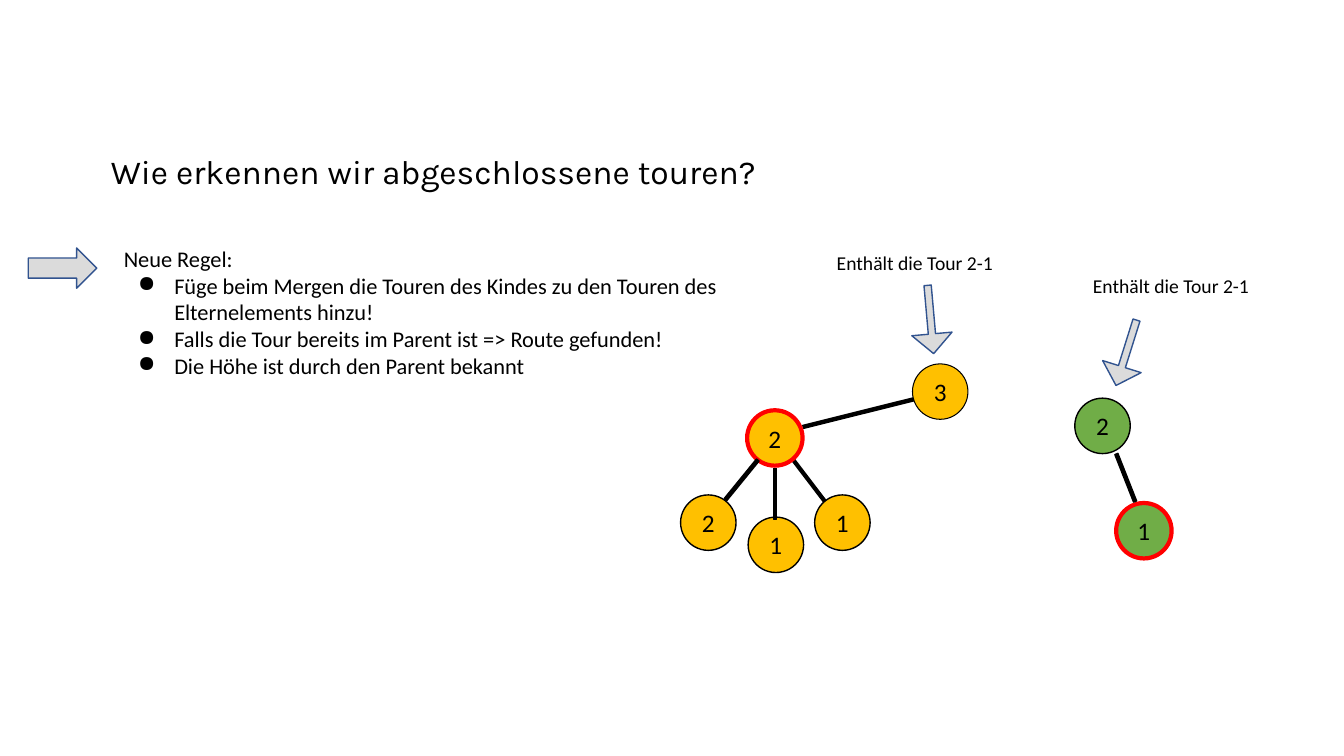
from dataclasses import dataclass

from lxml.etree import SubElement
from pptx import Presentation
from pptx.dml.color import RGBColor
from pptx.enum.shapes import MSO_SHAPE
from pptx.enum.text import MSO_ANCHOR, PP_ALIGN
from pptx.oxml.ns import qn
from pptx.util import Inches, Pt


@dataclass(frozen=True)
class Theme:
    """Colours, fonts and type sizes of the slide."""
    black: str = "000000"
    red: str = "FF0000"
    amber: str = "FFC000"
    green: str = "70AD47"
    grey: str = "DBDBDB"
    blue: str = "31538F"
    heading: str = "Karla"
    body: str = "Calibri"
    title_size: int = 24
    node_size: int = 18
    text_size: int = 16
    label_size: int = 14


class TreeSlide:
    """Draws the elements of a tree diagram on one slide."""

    def __init__(self, s, theme):
        """Keep the slide and its theme."""
        self.s, self.theme = s, theme

    def run(self, p, text, size, font):
        """Add one formatted run to a paragraph."""
        r = p.add_run()
        r.text = text
        for name, value in {"name": font, "size": Pt(size)}.items():
            setattr(r.font, name, value)
        r.font.color.rgb = RGBColor.from_string(self.theme.black)

    def frame(self, tf, inset=0.05, **format_values):
        """Set margins, wrapping and further text frame values."""
        values = {
            "word_wrap": True,
            "margin_left": Inches(0.1), "margin_right": Inches(0.1),
            "margin_top": Inches(inset), "margin_bottom": Inches(inset),
            **format_values,
        }
        for name, value in values.items():
            setattr(tf, name, value)

    def bullet(self, p):
        """Give a paragraph a hanging round bullet."""
        pPr = p._p.get_or_add_pPr()
        pPr.set("marL", str(Inches(0.5)))
        pPr.set("indent", str(Inches(-0.36)))
        colour = SubElement(pPr, qn("a:buClr"))
        SubElement(colour, qn("a:srgbClr")).set("val", self.theme.black)
        SubElement(pPr, qn("a:buChar")).set("char", "●")

    def text(self, box, lines, size, font=None, inset=0.05):
        """Add a text box whose lines after the first are bullets."""
        tf = self.s.shapes.add_textbox(*map(Inches, box)).text_frame
        self.frame(tf, inset)
        for i, line in enumerate(lines):
            p = tf.add_paragraph() if i else tf.paragraphs[0]
            if i:
                self.bullet(p)
            self.run(p, line, size, font or self.theme.body)

    def shape(self, kind, box, fill, line, width=1, rotation=0, adjustments=()):
        """Add a filled and outlined preset shape."""
        sp = self.s.shapes.add_shape(kind, *map(Inches, box))
        sp.shadow.inherit = False
        sp.rotation = rotation
        for i, value in enumerate(adjustments):
            sp.adjustments[i] = value
        sp.fill.solid()
        sp.fill.fore_color.rgb = RGBColor.from_string(fill)
        sp.line.color.rgb = RGBColor.from_string(line)
        sp.line.width = Pt(width)
        return sp

    def node(self, left, top, value, fill, line, width=1):
        """Add a numbered tree node."""
        sp = self.shape(MSO_SHAPE.OVAL, (left, top, 0.55, 0.55), fill, line, width)
        tf = sp.text_frame
        self.frame(tf, vertical_anchor=MSO_ANCHOR.MIDDLE)
        p = tf.paragraphs[0]
        p.alignment = PP_ALIGN.CENTER
        self.run(p, value, self.theme.node_size, self.theme.body)

    def edge(self, left, top, rotation, length=0.69, height=0.14):
        """Add a bar that joins two nodes."""
        black = self.theme.black
        self.shape(MSO_SHAPE.MATH_MINUS, (left, top, length, height),
                   black, black, 1, rotation, [0.235])

    def arrow(self, left, top, rotation=0, adjustments=(0.18, 0.49)):
        """Add a block arrow."""
        self.shape(MSO_SHAPE.RIGHT_ARROW, (left, top, 0.68, 0.4),
                   self.theme.grey, self.theme.blue, 1, rotation, adjustments)


def main():
    """Build and save the slide."""
    prs = Presentation()
    prs.slide_width, prs.slide_height = Inches(13.33), Inches(7.5)
    t = Theme()
    slide = TreeSlide(prs.slides.add_slide(prs.slide_layouts[6]), t)

    slide.text((1, 1.45, 11.35, 0.5), ["Wie erkennen wir abgeschlossene touren?"],
               t.title_size, t.heading)

    for edge in [(7.74, 4.03, 166, 1.57, 0.13), (7.68, 4.71, 52.7, 0.69, 0.12)]:
        slide.edge(*edge)
    for node in [
        (10.66, 3.95, "2", t.green, t.black),
        (11.07, 4.99, "1", t.green, t.red, 3),
        (9.05, 3.61, "3", t.amber, t.black, 0.75),
        (8.08, 4.91, "1", t.amber, t.black),
        (7.41, 4.07, "2", t.amber, t.red, 3),
        (6.75, 4.91, "2", t.amber, t.black),
        (7.42, 5.13, "1", t.amber, t.black),
    ]:
        slide.node(*node)
    for edge in [(10.82, 4.67, 68.5), (7.01, 4.69, 129.2), (7.34, 4.83, 90)]:
        slide.edge(*edge)

    slide.arrow(0.28, 2.46, adjustments=(0.5, 0.5))
    slide.text((1.13, 2.38, 6.09, 2.24), [
        "Neue Regel:",
        "Füge beim Mergen die Touren des Kindes zu den Touren des Elternelements hinzu!",
        "Falls die Tour bereits im Parent ist => Route gefunden!",
        "Die Höhe ist durch den Parent bekannt",
    ], t.text_size)

    for arrow in [(8.89, 2.97, 84.9), (10.83, 3.3, 107.4)]:
        slide.arrow(*arrow)
    for left, top in [(8.2, 2.39), (10.74, 2.62)]:
        slide.text((left, top, 2.25, 0.55), ["Enthält die Tour 2-1"],
                   t.label_size, inset=0.1)

    prs.save("out.pptx")


if __name__ == "__main__":
    main()
